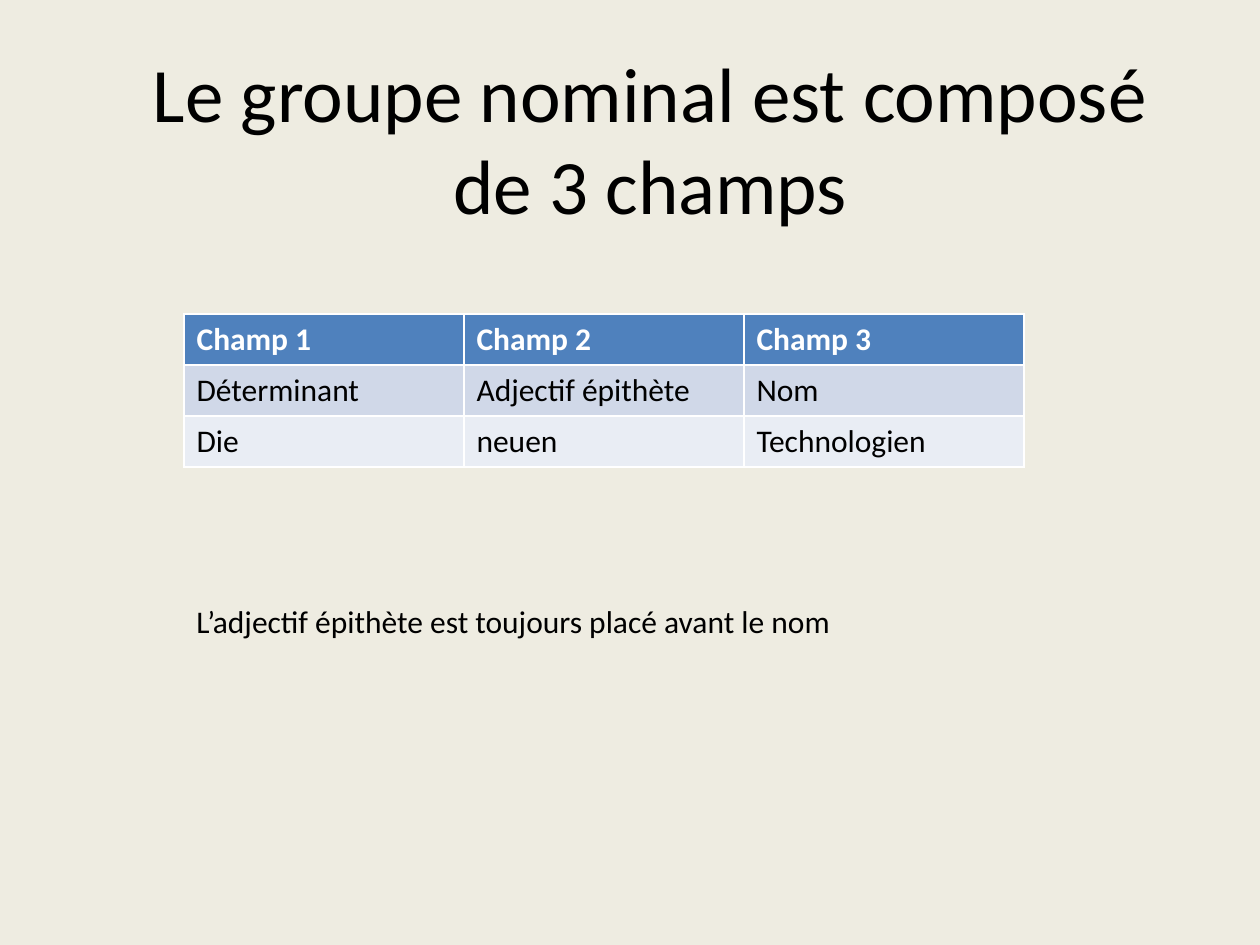
from pptx import Presentation
from pptx.dml.color import RGBColor
from pptx.enum.text import MSO_ANCHOR, MSO_AUTO_SIZE, PP_ALIGN
from pptx.util import Emu, Pt

MIDDLE, TOP = MSO_ANCHOR.MIDDLE, MSO_ANCHOR.TOP
CENTER, LEFT = PP_ALIGN.CENTER, PP_ALIGN.LEFT
GROW = MSO_AUTO_SIZE.SHAPE_TO_FIT_TEXT

FONT = "Calibri"
BACKGROUND = RGBColor(0xEE, 0xEC, 0xE1)
BLACK = RGBColor(0x00, 0x00, 0x00)
WHITE = RGBColor(0xFF, 0xFF, 0xFF)
HEADER = RGBColor(0x4F, 0x81, 0xBD)
BANDS = [RGBColor(0xD0, 0xD8, 0xE8), RGBColor(0xE9, 0xED, 0xF4)]

# Content
TITLE = "Le groupe nominal est composé de 3 champs"
FIELDS = [
    ("Champ 1", "Champ 2", "Champ 3"),
    ("Déterminant", "Adjectif épithète", "Nom"),
    ("Die", "neuen", "Technologien"),
]
RULE = "L’adjectif épithète est toujours placé avant le nom"

# Layout in px, 126 to the inch
TITLE_BOX = (115, 36, 1071, 203)
RULE_BOX = (184, 596, 833, 51)
TABLE_LEFT, TABLE_TOP = 184, 314
COL_W, ROW_H = 280, 51


def px(n):
    return Emu(round(n * 914400 / 126))


def style(p, size, color, bold=False):
    p.font.name = FONT
    p.font.size = Pt(size)
    p.font.color.rgb = color
    p.font.bold = bold


def add_text(s, box, text, size, align=LEFT, anchor=TOP):
    sp = s.shapes.add_textbox(*map(px, box))
    tf = sp.text_frame
    tf.word_wrap = True
    tf.vertical_anchor = anchor
    p = tf.paragraphs[0]
    p.text = text
    p.alignment = align
    style(p, size, BLACK)
    return tf


def add_fields(s):
    rows, cols = len(FIELDS), len(FIELDS[0])
    table = s.shapes.add_table(rows, cols, px(TABLE_LEFT), px(TABLE_TOP),
                               px(cols * COL_W), px(rows * ROW_H)).table
    for i, row in enumerate(FIELDS):
        is_header = i == 0
        for j, text in enumerate(row):
            cell = table.cell(i, j)
            cell.text = text
            cell.fill.solid()
            cell.fill.fore_color.rgb = HEADER if is_header else BANDS[(i - 1) % 2]
            style(cell.text_frame.paragraphs[0], 18,
                  WHITE if is_header else BLACK, is_header)


def main():
    prs = Presentation()
    prs.slide_width, prs.slide_height = px(1260), px(945)
    s = prs.slides.add_slide(prs.slide_layouts[6])
    s.background.fill.solid()
    s.background.fill.fore_color.rgb = BACKGROUND

    # Title, table of fields, rule
    add_text(s, TITLE_BOX, TITLE, 44, CENTER, MIDDLE)
    add_fields(s)
    add_text(s, RULE_BOX, RULE, 18).auto_size = GROW

    prs.save("out.pptx")


if __name__ == "__main__":
    main()
